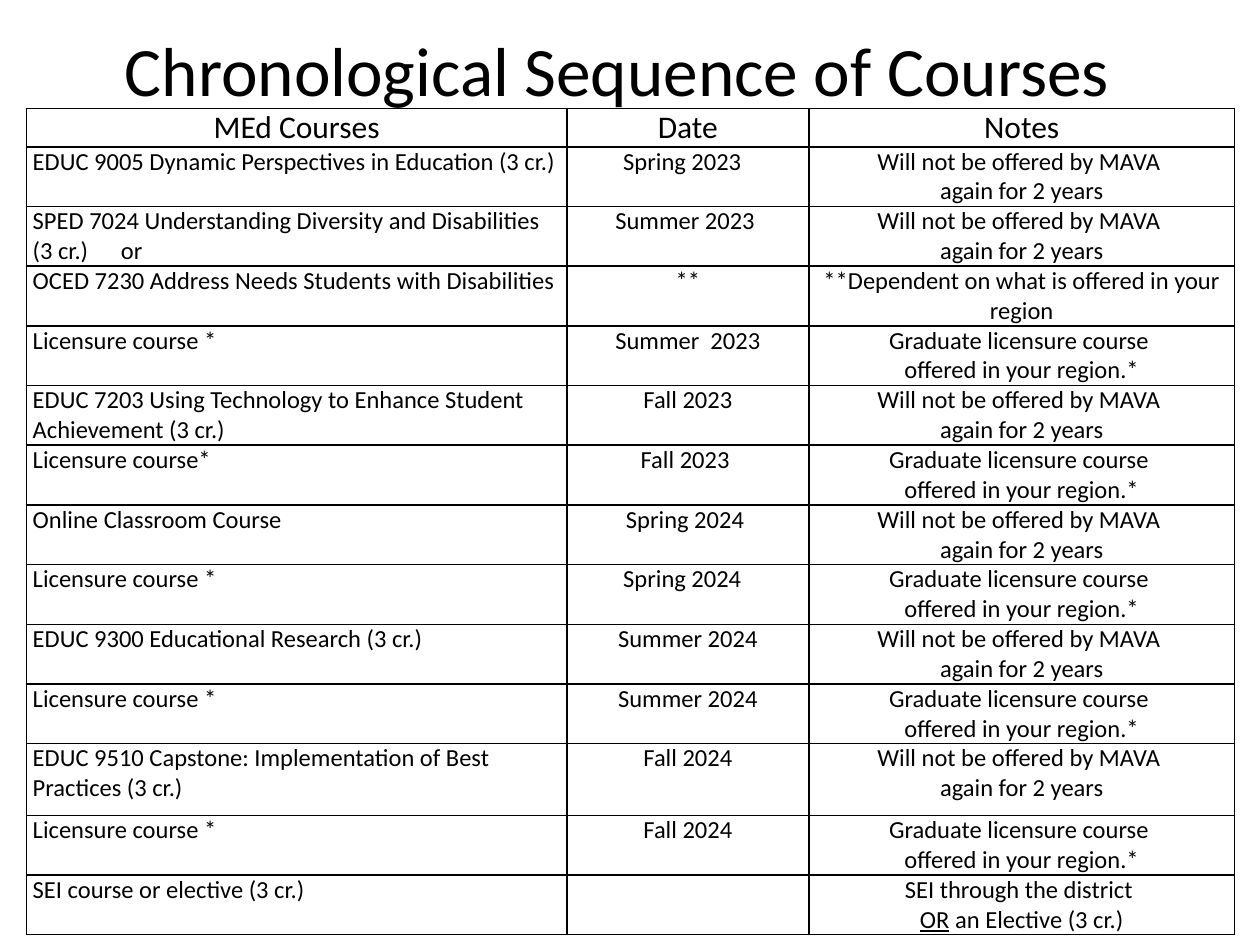
from lxml import etree
from pptx import Presentation
from pptx.dml.color import RGBColor
from pptx.enum.text import MSO_ANCHOR, MSO_AUTO_SIZE, PP_ALIGN
from pptx.oxml.ns import qn
from pptx.util import Inches, Pt

CENTER, LEFT = PP_ALIGN.CENTER, PP_ALIGN.LEFT
MIDDLE, TOP = MSO_ANCHOR.MIDDLE, MSO_ANCHOR.TOP
NO_AUTOFIT = MSO_AUTO_SIZE.NONE
BLACK = RGBColor(0x00, 0x00, 0x00)
WHITE = RGBColor(0xFF, 0xFF, 0xFF)
FONT = "Calibri"
TITLE_ONLY = 5

TITLE_BOX = (Inches(0.46), Inches(0.16), Inches(9), Inches(0.78))
TABLE_BOX = (Inches(0.21), Inches(0.86), Inches(9.58), Inches(6.48))
COLUMN_WIDTHS = (Inches(4.29), Inches(1.92), Inches(3.38))
HEADER_HEIGHT, COURSE_HEIGHT, CAPSTONE_HEIGHT = Inches(0.3), Inches(0.47), Inches(0.57)
OR_TAB = Inches(0.7)

LICENSURE = "Licensure course *"
CAPSTONE = "EDUC 9510 Capstone: Implementation of Best Practices (3 cr.)"
NOT_AGAIN = "Will not be offered by MAVA \nagain for 2 years"
REGIONAL = "Graduate licensure course \noffered in your region.*"
UNDERLINED = "OR"
HEADINGS = ("MEd Courses", "Date", "Notes")
COURSES = [
    ("EDUC 9005 Dynamic Perspectives in Education (3 cr.)", "Spring 2023  ", NOT_AGAIN),
    ("SPED 7024 Understanding Diversity and Disabilities\n(3 cr.)\tor", "Summer 2023 ", NOT_AGAIN),
    ("OCED 7230 Address Needs Students with Disabilities", "**",
     "**Dependent on what is offered in your region"),
    (LICENSURE, "Summer  2023", REGIONAL),
    ("EDUC 7203 Using Technology to Enhance Student Achievement (3 cr.)", "Fall 2023", NOT_AGAIN),
    ("Licensure course*", "Fall 2023 ", REGIONAL),
    ("Online Classroom Course", "Spring 2024 ", NOT_AGAIN),
    (LICENSURE, "Spring 2024  ", REGIONAL),
    ("EDUC 9300 Educational Research (3 cr.)", "Summer 2024", NOT_AGAIN),
    (LICENSURE, "Summer 2024", REGIONAL),
    (CAPSTONE, "Fall 2024", NOT_AGAIN),
    (LICENSURE, "Fall 2024", REGIONAL),
    ("SEI course or elective (3 cr.)", "", "SEI through the district \nOR an Elective (3 cr.)"),
]


def add_run(paragraph, text, size, underline=False):
    """Append one formatted run to a paragraph."""
    run = paragraph.add_run()
    run.text = text
    run.font.name = FONT
    run.font.size = Pt(size)
    run.font.bold = False
    run.font.underline = underline
    run.font.color.rgb = BLACK


def add_tab_stop(paragraph, position):
    """Give a paragraph a left tab stop."""
    stops = etree.SubElement(paragraph._p.get_or_add_pPr(), qn("a:tabLst"))
    etree.SubElement(stops, qn("a:tab"), pos=str(position), algn="l")


def add_borders(cell):
    """Draw a thin black line on all four sides of a cell."""
    properties = cell._tc.get_or_add_tcPr()
    for index, side in enumerate(("a:lnL", "a:lnR", "a:lnT", "a:lnB")):
        border = etree.Element(qn(side), w=str(Pt(1)))
        fill = etree.SubElement(border, qn("a:solidFill"))
        etree.SubElement(fill, qn("a:srgbClr"), val=str(BLACK))
        properties.insert(index, border)


def fill_cell(cell, text, size, alignment):
    """Format a cell and write its lines as paragraphs."""
    cell.margin_left = cell.margin_right = Inches(0.05)
    cell.margin_top = cell.margin_bottom = 0
    cell.vertical_anchor = TOP
    cell.fill.solid()
    cell.fill.fore_color.rgb = WHITE
    add_borders(cell)
    for index, line in enumerate(text.split("\n")):
        paragraph = cell.text_frame.add_paragraph() if index else cell.text_frame.paragraphs[0]
        paragraph.alignment = alignment
        if "\t" in line:
            add_tab_stop(paragraph, OR_TAB)
        if line.startswith(UNDERLINED):
            add_run(paragraph, UNDERLINED, size, underline=True)
            line = line.removeprefix(UNDERLINED)
        if line:
            add_run(paragraph, line, size)


def place_title(slide, box):
    """Write the slide title in its placeholder."""
    title = slide.shapes.title
    title.left, title.top, title.width, title.height = box
    frame = title.text_frame
    frame.auto_size = NO_AUTOFIT
    frame.word_wrap = True
    frame.vertical_anchor = MIDDLE
    frame.paragraphs[0].alignment = CENTER
    add_run(frame.paragraphs[0], "Chronological Sequence of Courses ", 39.6)


def place_course_table(slide, box):
    """Build the table of courses, dates and notes."""
    table = slide.shapes.add_table(len(COURSES) + 1, len(HEADINGS), *box).table
    table.first_row = table.horz_banding = False
    for column, width in zip(table.columns, COLUMN_WIDTHS):
        column.width = width
    table.rows[0].height = HEADER_HEIGHT
    for column, heading in enumerate(HEADINGS):
        fill_cell(table.cell(0, column), heading, 18, CENTER)
    for row, course in enumerate(COURSES, start=1):
        table.rows[row].height = CAPSTONE_HEIGHT if course[0] == CAPSTONE else COURSE_HEIGHT
        for column, text in enumerate(course):
            fill_cell(table.cell(row, column), text, 14, CENTER if column else LEFT)


def main():
    """Build and save the course sequence slide."""
    presentation = Presentation()
    presentation.slide_width, presentation.slide_height = Inches(10), Inches(7.5)
    slide = presentation.slides.add_slide(presentation.slide_layouts[TITLE_ONLY])
    place_title(slide, TITLE_BOX)
    place_course_table(slide, TABLE_BOX)
    presentation.save("out.pptx")


if __name__ == "__main__":
    main()
